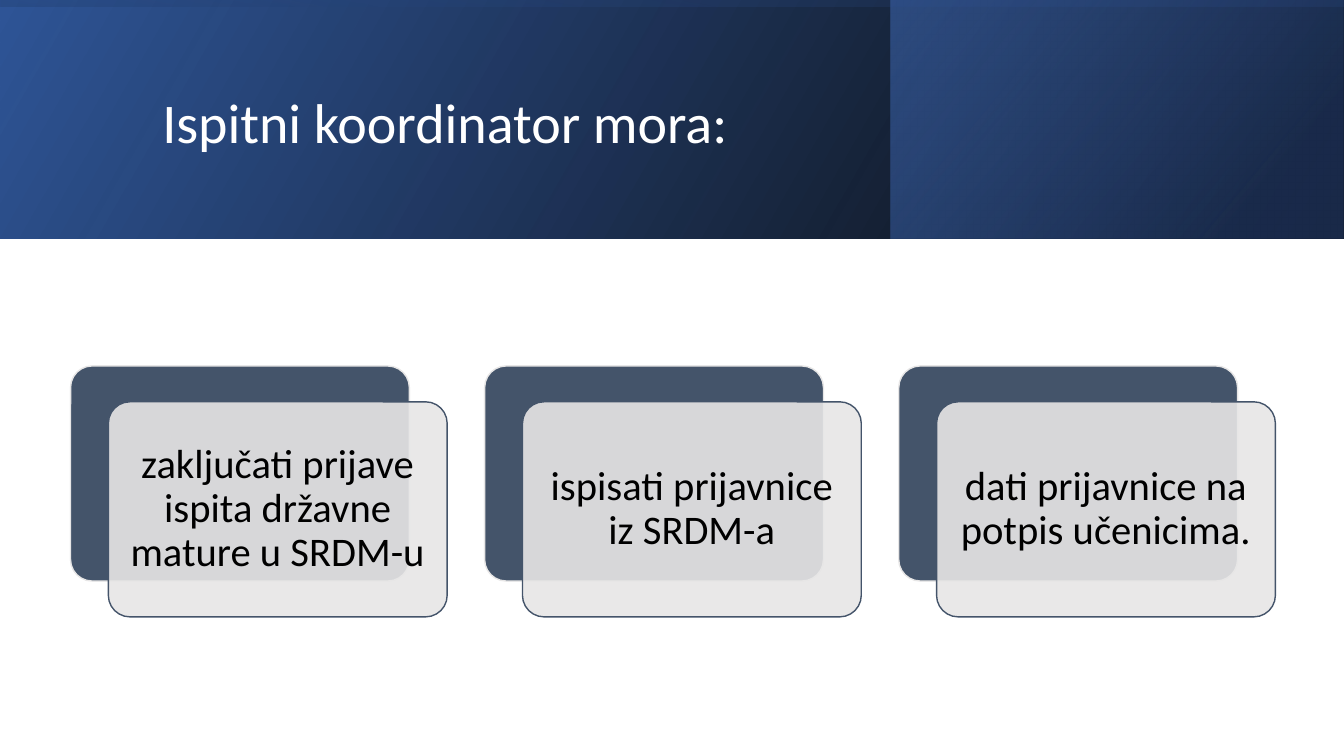
"""Build the slide listing what the exam coordinator must do."""

from dataclasses import dataclass

from lxml.etree import SubElement
from pptx import Presentation
from pptx.dml.color import RGBColor
from pptx.enum.shapes import MSO_SHAPE
from pptx.enum.text import MSO_ANCHOR, PP_ALIGN
from pptx.oxml.ns import qn
from pptx.shapes.autoshape import Shape
from pptx.slide import Slide
from pptx.text.text import TextFrame
from pptx.util import Pt

SLATE = "44546A"
PALE = "E7E6E6"
FIRST_CARD_LEFT, CARD_TOP = 50.4, 261.4
CARD_WIDTH, CARD_HEIGHT = 242, 153.6
CARD_PITCH = 295.8
FRONT_SHIFT_X, FRONT_SHIFT_Y = 27, 25.6


@dataclass(frozen=True)
class Box:
    """Position and size in points."""

    left: float
    top: float
    width: float
    height: float


@dataclass(frozen=True)
class Stop:
    """A gradient stop with position and opacity in percent."""

    position: float
    color: str
    opacity: float


@dataclass(frozen=True)
class Band:
    """A mirrored rectangle of the header with a clockwise gradient angle."""

    box: Box
    stops: tuple[Stop, Stop]
    angle: float
    rotation: float = 0


BANDS = (
    Band(Box(0, 0, 960, 170.6), (Stop(0, "000000", 96), Stop(100, "2F5597", 100)), 330),
    Band(Box(636.5, 0, 322.9, 170.6), (Stop(19, "203864", 68), Stop(100, "4472C4", 48)), 320),
    Band(
        Box(394.7, -394.7, 170.6, 960),
        (Stop(23, "2F5597", 16), Stop(99, "000000", 45)),
        350,
        rotation=270,
    ),
)
TASKS = (
    "zaključati prijave ispita državne mature u SRDM-u",
    "ispisati prijavnice iz SRDM-a",
    "dati prijavnice na potpis učenicima.",
)


def rgb(color: str) -> RGBColor:
    """Turn a hex string into a colour."""
    return RGBColor.from_string(color)


def set_opacity(shape: Shape, opacities: list[float]) -> None:
    """Give the fill colours of a shape their opacities in percent."""
    for color, opacity in zip(shape.element.spPr.iter(qn("a:srgbClr")), opacities):
        SubElement(color, qn("a:alpha"), val=str(round(opacity * 1000)))


def write_text(
    frame: TextFrame,
    text: str,
    *,
    size: float,
    color: str,
    align: PP_ALIGN,
    margin_x: float,
    margin_y: float,
) -> None:
    """Write one vertically centred paragraph into a text frame."""
    frame.word_wrap = True
    frame.vertical_anchor = MSO_ANCHOR.MIDDLE
    frame.margin_left = frame.margin_right = Pt(margin_x)
    frame.margin_top = frame.margin_bottom = Pt(margin_y)
    paragraph = frame.paragraphs[0]
    paragraph.alignment = align
    paragraph.line_spacing = 0.9
    run = paragraph.add_run()
    run.text = text
    run.font.name = "Calibri"
    run.font.size = Pt(size)
    run.font.color.rgb = rgb(color)


def add_box(slide: Slide, kind: MSO_SHAPE, box: Box) -> Shape:
    """Add a preset shape without shadow."""
    shape = slide.shapes.add_shape(
        kind, Pt(box.left), Pt(box.top), Pt(box.width), Pt(box.height)
    )
    shape.shadow.inherit = False
    return shape


def add_band(slide: Slide, band: Band) -> None:
    """Add one gradient band of the header."""
    shape = add_box(slide, MSO_SHAPE.RECTANGLE, band.box)
    shape.rotation = band.rotation
    shape.element.spPr.find(qn("a:xfrm")).set("flipH", "1")
    shape.line.fill.background()
    shape.fill.gradient()
    shape.fill.gradient_angle = 360 - band.angle
    for gradient_stop, stop in zip(shape.fill.gradient_stops, band.stops):
        gradient_stop.position = stop.position / 100
        gradient_stop.color.rgb = rgb(stop.color)
    set_opacity(shape, [stop.opacity for stop in band.stops])


def add_card(slide: Slide, box: Box, fill: str, line: str) -> Shape:
    """Add one rounded card."""
    shape = add_box(slide, MSO_SHAPE.ROUNDED_RECTANGLE, box)
    shape.adjustments[0] = 0.1
    shape.fill.solid()
    shape.fill.fore_color.rgb = rgb(fill)
    shape.line.color.rgb = rgb(line)
    shape.line.width = Pt(1)
    return shape


def add_task(slide: Slide, index: int, text: str) -> None:
    """Add a dark card with a translucent text card in front of it."""
    left = FIRST_CARD_LEFT + index * CARD_PITCH
    add_card(slide, Box(left, CARD_TOP, CARD_WIDTH, CARD_HEIGHT), SLATE, PALE)
    front_box = Box(left + FRONT_SHIFT_X, CARD_TOP + FRONT_SHIFT_Y, CARD_WIDTH, CARD_HEIGHT)
    front = add_card(slide, front_box, PALE, SLATE)
    set_opacity(front, [90])
    write_text(
        front.text_frame,
        text,
        size=29,
        color="000000",
        align=PP_ALIGN.CENTER,
        margin_x=8.7,
        margin_y=8.7,
    )


def add_title(slide: Slide, text: str) -> None:
    """Place the title in front of the header bands."""
    title = slide.shapes.title
    title.left, title.top = Pt(108.7), Pt(27.4)
    title.width, title.height = Pt(765.4), Pt(123.8)
    title.element.getparent().append(title.element)
    write_text(
        title.text_frame,
        text,
        size=40,
        color="FFFFFF",
        align=PP_ALIGN.LEFT,
        margin_x=7.2,
        margin_y=3.6,
    )


def main() -> None:
    """Create and save the presentation."""
    presentation = Presentation()
    presentation.slide_width, presentation.slide_height = Pt(960), Pt(540)
    slide = presentation.slides.add_slide(presentation.slide_layouts[5])
    for band in BANDS:
        add_band(slide, band)
    add_title(slide, "Ispitni koordinator mora:")
    for index, text in enumerate(TASKS):
        add_task(slide, index, text)
    presentation.save("out.pptx")


if __name__ == "__main__":
    main()
